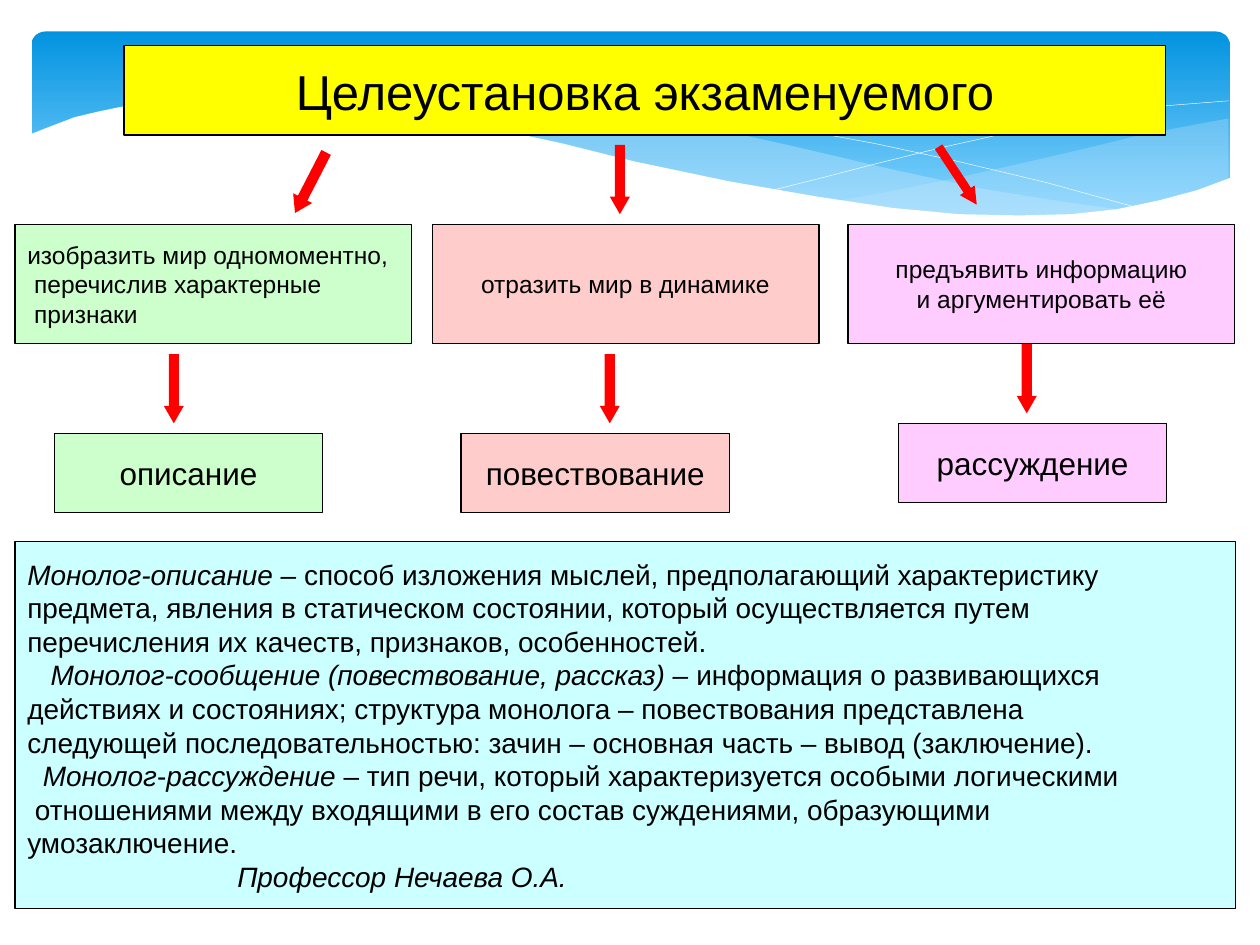
"""Builds a slide on the aims of an exam monologue and the matching types of speech."""
from lxml import etree
from pptx import Presentation
from pptx.dml.color import RGBColor
from pptx.enum.shapes import MSO_SHAPE
from pptx.enum.text import MSO_ANCHOR, PP_ALIGN
from pptx.oxml.ns import qn
from pptx.util import Pt

RECTANGLE = MSO_SHAPE.RECTANGLE
ROUNDED = MSO_SHAPE.ROUNDED_RECTANGLE
DOWN_ARROW = MSO_SHAPE.DOWN_ARROW
MIDDLE = MSO_ANCHOR.MIDDLE
LEFT, CENTER = PP_ALIGN.LEFT, PP_ALIGN.CENTER

BLACK = RGBColor(0x00, 0x00, 0x00)
WHITE = RGBColor(0xFF, 0xFF, 0xFF)
RED = RGBColor(0xFF, 0x00, 0x00)
YELLOW = RGBColor(0xFF, 0xFF, 0x00)
GREEN = RGBColor(0xCC, 0xFF, 0xCC)
PINK = RGBColor(0xFF, 0xCC, 0xCC)
LILAC = RGBColor(0xFF, 0xCC, 0xFF)
CYAN = RGBColor(0xCC, 0xFF, 0xFF)
SKY_DARK = RGBColor(0x02, 0x93, 0xE0)
SKY_LIGHT = RGBColor(0x83, 0xD3, 0xFE)
MIST = RGBColor(0xC6, 0xE7, 0xFC)

RIGHT_WAVE = [
    (702, 67.7), (682.6, 71.3), (652.3, 77), (619.9, 85), (579.6, 94.3), (542.2, 102.6),
    (508.3, 109.4), (475.9, 115.2), (497.5, 117.4), (517.7, 119.5), (545, 122.4),
    (570.2, 123.8), (593.3, 123.8), (614.9, 122.4), (640.1, 119.5), (663.1, 115.2),
    (683.3, 109.4), (702, 102.2)]
MIDDLE_WAVE = [
    (643, 120.2), (602.6, 114.5), (558, 107.3), (508.3, 96.5), (452.9, 83.5), (420.5, 76.3),
    (389.5, 69.8), (361.4, 64.8), (334.8, 61.9), (302.4, 59), (273.6, 57.6), (247.7, 57.6),
    (225.4, 59), (205.9, 61.9), (232.6, 64.8), (260.6, 69.8), (290.9, 76.3), (323.3, 83.5),
    (381.6, 97.2), (432.7, 107.6), (480, 115.9), (520, 121), (556.6, 123.8), (588.9, 124.6),
    (617, 123.1)]
FALLING_LINE = [
    (222.5, 64.8), (236.2, 61.9), (261.4, 59.8), (299.5, 58.3), (337.7, 59.8), (383.8, 63.4),
    (437.8, 70.6), (500.4, 82.1), (547.2, 92.2), (598.3, 104.4), (653, 119.5)]
RISING_LINE = [
    (441.4, 108.7), (470.2, 101.5), (500.4, 93.6), (538.6, 84.2), (580.3, 74.9), (623.5, 67),
    (665.3, 60.5), (702, 57.6)]
WHITE_WAVE = [
    (703.4, 101.5), (684, 108.7), (662.4, 114.5), (638.6, 119.5), (612, 122.4), (582.5, 123.1),
    (547.9, 122.4), (509.8, 118.8), (466.6, 112.3), (416.9, 103.7), (362.2, 92.2), (321.8, 82.1),
    (281.5, 73.4), (244.8, 66.2), (210.2, 61.2), (180, 58.3), (151.9, 56.2), (127.4, 56.2),
    (105.1, 56.9), (85.7, 59), (68.4, 61.2), (54.7, 64.1), (42.5, 67), (33.1, 70.6),
    (25.9, 73.4), (16.6, 77), (16.6, 161.3), (703.4, 161.3)]

DEFINITIONS = [
    (0, [("Монолог-описание – ", True),
         ("способ изложения мыслей, предполагающий характеристику", False)]),
    (0, [("предмета, явления в статическом состоянии, который осуществляется путем", False)]),
    (0, [("перечисления их качеств, признаков, особенностей.", False)]),
    (13.3, [("Монолог-сообщение (повествование, рассказ) – ", True),
            ("информация о развивающихся", False)]),
    (0, [("действиях и состояниях; структура монолога – повествования представлена", False)]),
    (0, [("следующей последовательностью: зачин – основная часть – вывод (заключение).", False)]),
    (8.9, [("Монолог", True), ("-", False), ("рассуждение", True),
           (" – тип речи, который характеризуется особыми логическими", False)]),
    (4.4, [("отношениями между входящими в его состав суждениями, образующими", False)]),
    (0, [("умозаключение.", False)]),
    (120, [("Профессор Нечаева О.А.", True)])]


def plain(*lines, indent=0):
    """Return upright lines, with the indent on all but the first."""
    return [(indent if index else 0, [(line, False)]) for index, line in enumerate(lines)]


class SlideBuilder:
    """Holds the style and the current slide."""

    def __init__(self, slide, font="Arial", outline=0.75):
        self.slide = slide
        self.font = font
        self.outline = outline

    def preset(self, kind, left, top, width, height):
        """Add a preset shape without shadow or outline."""
        shape = self.slide.shapes.add_shape(kind, Pt(left), Pt(top), Pt(width), Pt(height))
        shape.shadow.inherit = False
        shape.line.fill.background()
        return shape

    def banner(self, left, top, width, height):
        """Add the rounded band with a vertical gradient."""
        shape = self.preset(ROUNDED, left, top, width, height)
        shape.adjustments[0] = 0.07
        shape.fill.gradient()
        shape.fill.gradient_angle = 270
        for stop, color, position in zip(shape.fill.gradient_stops, (SKY_DARK, SKY_LIGHT), (0, 0.9)):
            stop.color.rgb = color
            stop.position = position

    def outline_shape(self, points, closed):
        """Add a freeform through the points."""
        corners = [(Pt(x), Pt(y)) for x, y in points]
        builder = self.slide.shapes.build_freeform(*corners[0], scale=1.0)
        builder.add_line_segments(corners[1:], close=closed)
        shape = builder.convert_to_shape()
        shape.shadow.inherit = False
        return shape

    def wave(self, points, color, opacity=100):
        """Add a filled wave of the given opacity in percent."""
        shape = self.outline_shape(points, True)
        shape.line.fill.background()
        shape.fill.solid()
        shape.fill.fore_color.rgb = color
        if opacity < 100:
            fill = shape.fill._xPr.find(qn("a:solidFill"))
            etree.SubElement(fill[0], qn("a:alpha"), val=str(opacity * 1000))

    def curve(self, points):
        """Add a thin white curve."""
        shape = self.outline_shape(points, False)
        shape.fill.background()
        shape.line.color.rgb = WHITE
        shape.line.width = Pt(0.25)

    def box(self, left, top, width, height, color, lines, size, alignment=CENTER):
        """Add an outlined box with its lines of text."""
        shape = self.preset(RECTANGLE, left, top, width, height)
        shape.fill.solid()
        shape.fill.fore_color.rgb = color
        shape.line.color.rgb = BLACK
        shape.line.width = Pt(self.outline)
        frame = shape.text_frame
        frame.word_wrap = True
        frame.vertical_anchor = MIDDLE
        for index, (indent, runs) in enumerate(lines):
            paragraph = frame.add_paragraph() if index else frame.paragraphs[0]
            paragraph.alignment = alignment
            if indent:
                paragraph._p.get_or_add_pPr().set("indent", str(Pt(indent)))
            for text, italic in runs:
                run = paragraph.add_run()
                run.text = text
                run.font.name = self.font
                run.font.size = Pt(size)
                run.font.italic = italic
                run.font.color.rgb = BLACK

    def arrow(self, left, top, width=11.5, height=39.6, rotation=0, head=0.87):
        """Add a red arrow pointing down before rotation."""
        shape = self.preset(DOWN_ARROW, left, top, width, height)
        shape.adjustments[0] = 0.5
        shape.adjustments[1] = head
        shape.rotation = rotation
        shape.fill.solid()
        shape.fill.fore_color.rgb = RED


def main():
    """Build and save the slide."""
    presentation = Presentation()
    presentation.slide_width, presentation.slide_height = Pt(720), Pt(540)
    builder = SlideBuilder(presentation.slides.add_slide(presentation.slide_layouts[6]))

    builder.banner(18, 18, 684.7, 112.3)
    builder.wave(RIGHT_WAVE, MIST, 29)
    builder.wave(MIDDLE_WAVE, MIST, 40)
    builder.curve(FALLING_LINE)
    builder.curve(RISING_LINE)
    builder.wave(WHITE_WAVE, WHITE)

    builder.box(70.9, 26.2, 595.3, 51, YELLOW, plain("Целеустановка экзаменуемого"), 28)
    builder.arrow(171.4, 85, 12.2, 38.9, 27.2, 0.78)
    builder.arrow(348.5, 82.8)
    builder.arrow(542.2, 80.6, 10.1, 39.6, 326.6, 0.97)

    aims = [
        (8.5, 226.8, GREEN, LEFT,
         plain("изобразить мир одномоментно,", "перечислив характерные", "признаки", indent=3.9)),
        (247, 221, PINK, CENTER, plain("отразить мир в динамике")),
        (484.6, 221, LILAC, CENTER, plain("предъявить информацию", "и аргументировать её"))]
    for left, width, color, alignment, lines in aims:
        builder.box(left, 128.2, width, 68, color, lines, 14, alignment)

    speech_types = [
        (31, 247.7, 93.6, 202.3, GREEN, "описание"),
        (263.5, 247.7, 342.7, 202.3, PINK, "повествование"),
        (513.4, 241.9, 581, 196.6, LILAC, "рассуждение")]
    for left, top, arrow_left, arrow_top, color, name in speech_types:
        builder.arrow(arrow_left, arrow_top)
        builder.box(left, top, 153.4, 45.4, color, plain(name), 18)

    builder.box(8.5, 309.6, 697.7, 209.5, CYAN, DEFINITIONS, 16, LEFT)
    presentation.save("out.pptx")


if __name__ == "__main__":
    main()
